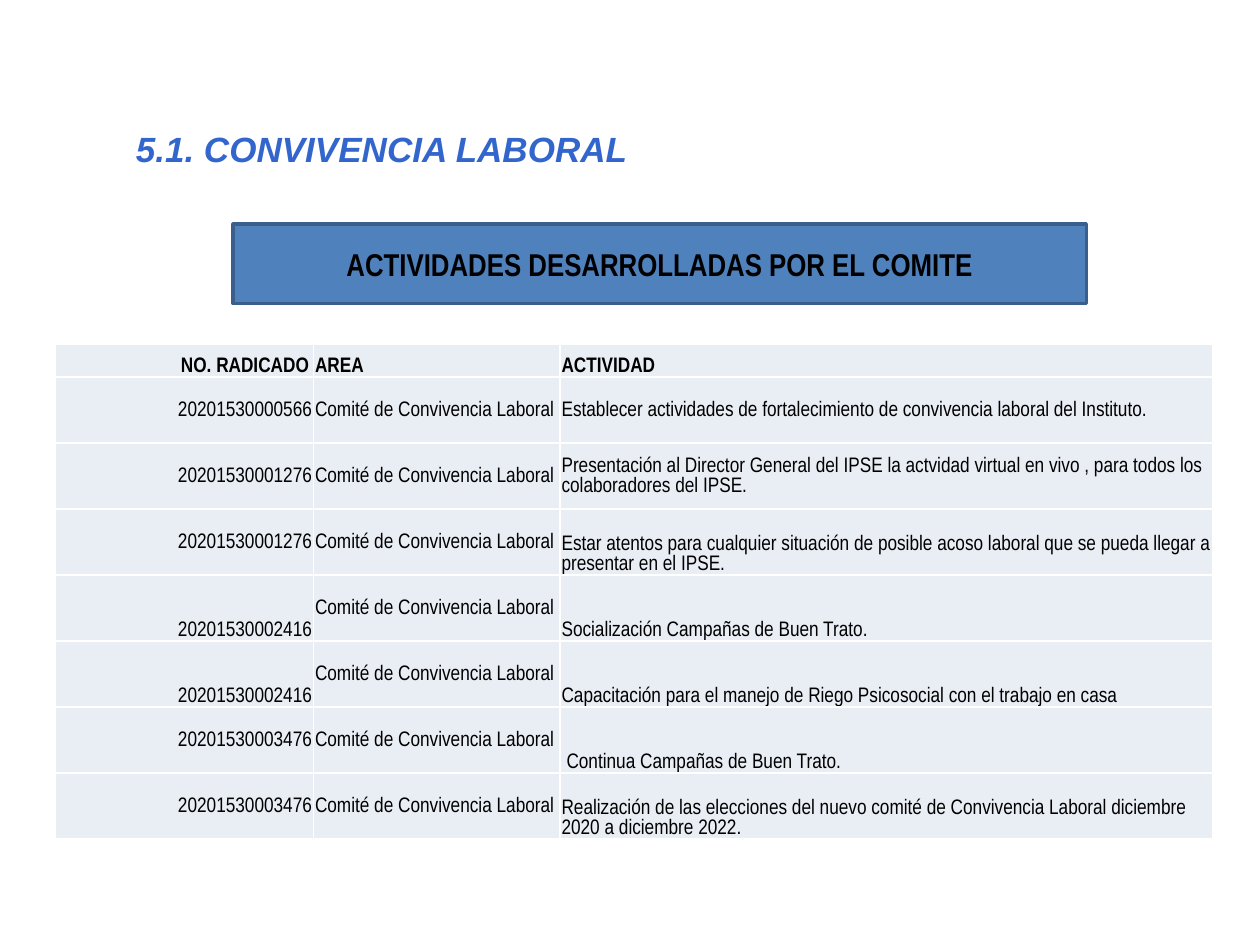
from dataclasses import dataclass

from lxml import etree
from pptx import Presentation
from pptx.dml.color import RGBColor
from pptx.enum.shapes import MSO_SHAPE
from pptx.enum.text import MSO_ANCHOR, PP_ALIGN
from pptx.oxml.ns import qn
from pptx.util import Cm, Pt

LEFT, CENTER, RIGHT = PP_ALIGN.LEFT, PP_ALIGN.CENTER, PP_ALIGN.RIGHT
MIDDLE, BOTTOM = MSO_ANCHOR.MIDDLE, MSO_ANCHOR.BOTTOM
RECTANGLE = MSO_SHAPE.RECTANGLE
TITLE_ONLY = 5


@dataclass(frozen=True)
class Theme:
    title_color: str = "3366CC"
    banner_fill: str = "4F81BD"
    banner_line: str = "3A5F8C"
    cell_fill: str = "E9EDF4"
    border: str = "FFFFFF"
    text: str = "000000"
    title_font: str = "Arial"
    body_font: str = "Arial Narrow"
    title_size: int = 20
    banner_size: int = 18
    table_size: int = 12


THEME = Theme()
AREA = "Comité de Convivencia Laboral"
HEADERS = ["NO. RADICADO", "AREA", "ACTIVIDAD"]
# Filing number, its anchor, activity, its anchor
ACTIVITIES = [
    ("20201530000566", MIDDLE,
     "Establecer actividades de fortalecimiento de convivencia laboral del Instituto.", MIDDLE),
    ("20201530001276", MIDDLE,
     "Presentación al Director General del IPSE la actvidad virtual en vivo , "
     "para todos los colaboradores del IPSE.", MIDDLE),
    ("20201530001276", MIDDLE,
     "Estar atentos para cualquier situación de posible acoso laboral "
     "que se pueda llegar a presentar en el IPSE.", BOTTOM),
    ("20201530002416", BOTTOM, "Socialización Campañas de Buen Trato.", BOTTOM),
    ("20201530002416", BOTTOM,
     "Capacitación para el manejo de Riego Psicosocial con el trabajo en casa", BOTTOM),
    ("20201530003476", MIDDLE, "Continua Campañas de Buen Trato.", BOTTOM),
    ("20201530003476", MIDDLE,
     "Realización de las elecciones del nuevo comité de Convivencia Laboral "
     "diciembre 2020 a diciembre 2022.", BOTTOM),
]
COLUMN_WIDTHS = [5.2, 4.97, 13.16]
HEADER_HEIGHT, ROW_HEIGHT = 0.67, 1.33
CELL_MARGIN = 0.03


def write_text(frame, text, font_name, size, color, align, bold=False, italic=False):
    frame.word_wrap = True
    para = frame.paragraphs[0]
    para.text = text
    para.alignment = align
    para.space_before = Pt(0)
    font = para.font
    font.name, font.size = font_name, Pt(size)
    font.bold, font.italic = bold, italic
    font.color.rgb = RGBColor.from_string(color)


def format_title(page):
    title = page.shapes.title
    title.left, title.top = Cm(1.09), Cm(2.44)
    title.width, title.height = Cm(13.21), Cm(1.12)
    title.text_frame.vertical_anchor = MIDDLE
    write_text(title.text_frame, "5.1. CONVIVENCIA LABORAL", THEME.title_font,
               THEME.title_size, THEME.title_color, CENTER, bold=True, italic=True)


def add_banner(page):
    banner = page.shapes.add_shape(RECTANGLE, Cm(4.7), Cm(4.52), Cm(17.2), Cm(1.6))
    banner.shadow.inherit = False
    banner.fill.solid()
    banner.fill.fore_color.rgb = RGBColor.from_string(THEME.banner_fill)
    banner.line.color.rgb = RGBColor.from_string(THEME.banner_line)
    banner.line.width = Pt(2)
    banner.text_frame.vertical_anchor = MIDDLE
    write_text(banner.text_frame, "ACTIVIDADES DESARROLLADAS POR EL COMITE",
               THEME.body_font, THEME.banner_size, THEME.text, CENTER, bold=True)


def set_borders(cell):
    properties = cell._tc.get_or_add_tcPr()
    for index, side in enumerate(("a:lnL", "a:lnR", "a:lnT", "a:lnB")):
        line = etree.Element(qn(side), w=str(Pt(1)))
        fill = etree.SubElement(line, qn("a:solidFill"))
        etree.SubElement(fill, qn("a:srgbClr"), val=THEME.border)
        properties.insert(index, line)


def fill_cell(cell, text, anchor, align=LEFT, bold=False):
    cell.margin_left = cell.margin_right = cell.margin_top = Cm(CELL_MARGIN)
    cell.margin_bottom = 0
    cell.vertical_anchor = anchor
    cell.fill.solid()
    cell.fill.fore_color.rgb = RGBColor.from_string(THEME.cell_fill)
    set_borders(cell)
    write_text(cell.text_frame, text, THEME.body_font, THEME.table_size,
               THEME.text, align, bold)


def add_activity_table(page):
    row_heights = [HEADER_HEIGHT] + [ROW_HEIGHT] * len(ACTIVITIES)
    table = page.shapes.add_table(
        len(row_heights), len(COLUMN_WIDTHS), Cm(1.12), Cm(6.93),
        Cm(sum(COLUMN_WIDTHS)), Cm(sum(row_heights))).table
    for column, width in zip(table.columns, COLUMN_WIDTHS):
        column.width = Cm(width)
    for row, height in zip(table.rows, row_heights):
        row.height = Cm(height)

    aligns = [RIGHT, LEFT, LEFT]
    for column, header in enumerate(HEADERS):
        fill_cell(table.cell(0, column), header, BOTTOM, aligns[column], bold=True)
    table.cell(0, 0).margin_right = Cm(0.09)

    for row, (number, number_anchor, activity, activity_anchor) in enumerate(ACTIVITIES, 1):
        contents = [(number, number_anchor), (AREA, MIDDLE), (activity, activity_anchor)]
        for column, (text, anchor) in enumerate(contents):
            fill_cell(table.cell(row, column), text, anchor, aligns[column])
    table.cell(6, 2).margin_left = Cm(0.13)


def main():
    deck = Presentation()
    deck.slide_width, deck.slide_height = Cm(25.4), Cm(19.05)
    page = deck.slides.add_slide(deck.slide_layouts[TITLE_ONLY])
    format_title(page)
    add_banner(page)
    add_activity_table(page)
    deck.save("out.pptx")


if __name__ == "__main__":
    main()
